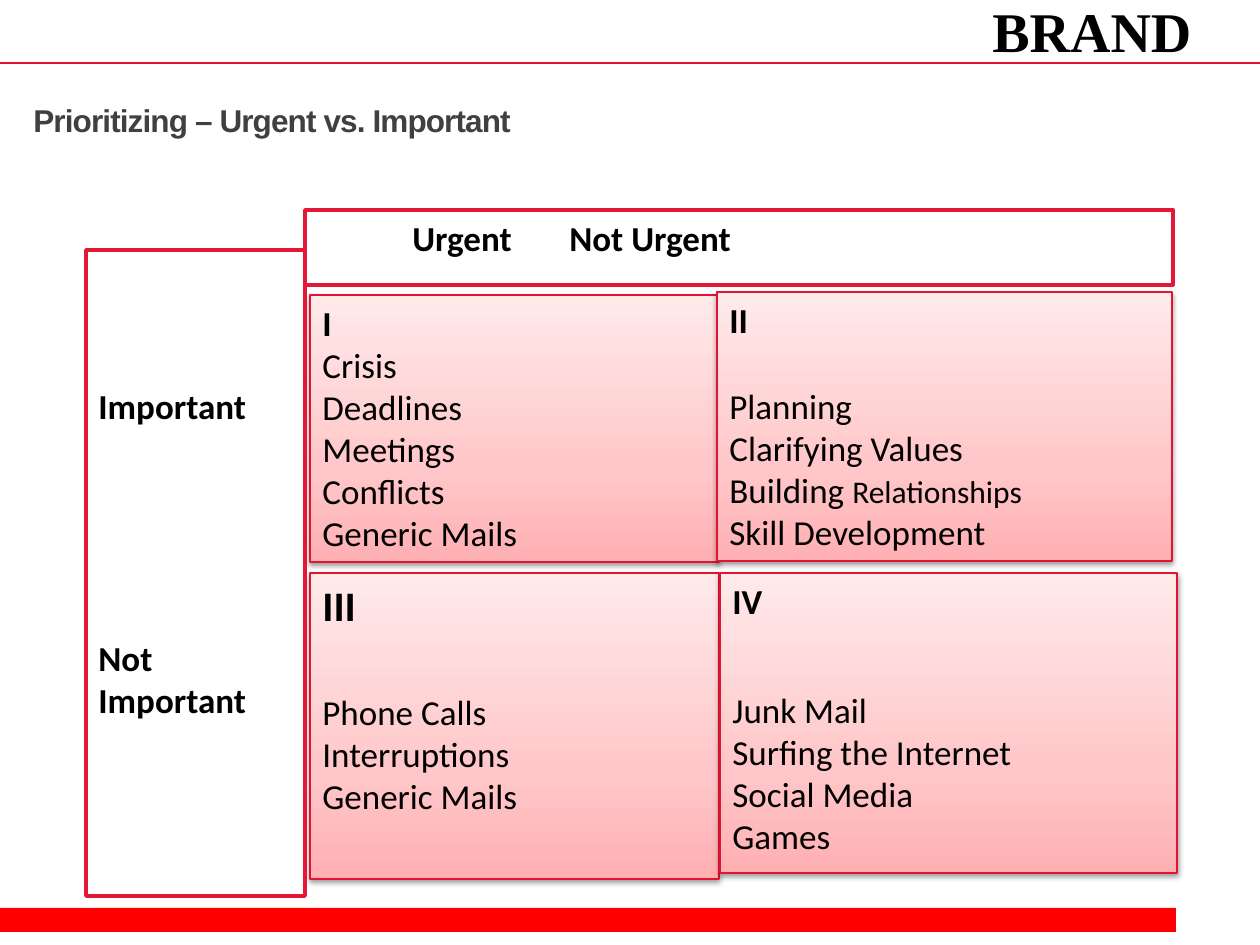
from pptx import Presentation
from pptx.dml.color import RGBColor
from pptx.enum.shapes import MSO_CONNECTOR, MSO_SHAPE
from pptx.enum.text import MSO_ANCHOR, PP_ALIGN
from pptx.oxml.ns import qn
from pptx.util import Pt
from lxml import etree

RECT = MSO_SHAPE.RECTANGLE
STRAIGHT = MSO_CONNECTOR.STRAIGHT
TOP = MSO_ANCHOR.TOP
LEFT, CENTER = PP_ALIGN.LEFT, PP_ALIGN.CENTER
SCALE = 914400 / 126  # EMU per px

FRAME_RED, RULE_RED, BAR_RED = "E31837", "E31332", "FF0000"
WHITE, BLACK, GREY = "FFFFFF", "000000", "404040"
PINK_STOPS = ((0, "FFB0B3"), (35, "FFC7C9"), (100, "FFEAEA"))


def px(length):
    return round(length * SCALE)


def color(value):
    return RGBColor.from_string(value)


def child(parent, tag, **attributes):
    return etree.SubElement(parent, qn(tag), {k: str(v) for k, v in attributes.items()})


def write(frame, lines, font="Calibri", size=20, fill=BLACK, bold=False,
          align=LEFT, spacing=None):
    """Each line is a list of (text, overrides) runs and the gap above it in points."""
    frame.word_wrap = True
    frame.vertical_anchor = TOP
    for index, (runs, gap) in enumerate(lines):
        paragraph = frame.paragraphs[0] if index == 0 else frame.add_paragraph()
        paragraph.alignment = align
        if gap:
            paragraph.space_before = Pt(gap)
        for text, changes in runs:
            run = paragraph.add_run()
            run.text = text
            run.font.name = font
            run.font.size = Pt(changes.get("size", size))
            run.font.bold = changes.get("bold", bold)
            run.font.color.rgb = color(fill)
            if spacing:
                run.font._element.set("spc", str(spacing))


def line_of(text, gap=0, **changes):
    return [(text, changes)], gap


def add_box(slide, box, fill=None, line=None, width=0.75):
    shape = slide.shapes.add_shape(RECT, *map(px, box))
    shape.shadow.inherit = False
    if fill:
        shape.fill.solid()
        shape.fill.fore_color.rgb = color(fill)
    if line:
        shape.line.color.rgb = color(line)
        shape.line.width = Pt(width)
    else:
        shape.line.fill.background()
    return shape


def add_text(slide, box, lines, **style):
    frame = slide.shapes.add_textbox(*map(px, box)).text_frame
    write(frame, lines, **style)


def add_branding(slide, width):
    # Name at top right, rule under it, bar at the foot
    add_text(slide, (966, -10, 252, 73), [line_of("BRAND")],
             font="Times New Roman", size=32, bold=True, align=CENTER)
    add_box(slide, (0, 908, 1176, 24), BAR_RED)
    rule = slide.shapes.add_connector(STRAIGHT, 0, px(63), px(width), px(63))
    rule.line.color.rgb = color(RULE_RED)
    rule.line.width = Pt(0.75)
    child(rule._element.spPr, "a:effectLst")


def add_column_header(slide, box, first, second, first_x, second_x):
    header = add_box(slide, box, WHITE, FRAME_RED, 2)
    write(header.text_frame, [line_of(f"{first}\t{second}")], bold=True)
    properties = header.text_frame.paragraphs[0]._p.get_or_add_pPr()
    properties.set("marL", "0")
    properties.set("indent", str(px(first_x)))
    tabs = child(properties, "a:tabLst")
    child(tabs, "a:tab", pos=px(second_x), algn="l")


def add_row_header(slide, box, lines, top_inset):
    header = add_box(slide, box, WHITE, FRAME_RED, 2)
    header.text_frame.margin_top = px(top_inset)
    write(header.text_frame, lines, bold=True)


def add_quadrant(slide, box, numeral, items, gap=0, numeral_size=20):
    quadrant = add_box(slide, box, line=RULE_RED)
    # Pink gradient, darkest at the bottom
    quadrant.fill.gradient()
    quadrant.fill.gradient_angle = 90
    properties = quadrant._element.spPr
    stops = properties.find(qn("a:gradFill")).find(qn("a:gsLst"))
    for stop in list(stops):
        stops.remove(stop)
    for position, value in PINK_STOPS:
        child(child(stops, "a:gs", pos=position * 1000), "a:srgbClr", val=value)
    # Soft shadow below
    shadow = child(properties.find(qn("a:effectLst")), "a:outerShdw", blurRad=Pt(3.1),
                   dist=Pt(1.6), dir=5400000, rotWithShape=0)
    child(child(shadow, "a:srgbClr", val=BLACK), "a:alpha", val=38000)

    first, *others = items
    lines = [line_of(numeral, bold=True, size=numeral_size), (first, gap)]
    write(quadrant.text_frame, lines + [(item, 0) for item in others])


def plain(*texts):
    return [[(text, {})] for text in texts]


def main():
    deck = Presentation()
    deck.slide_width, deck.slide_height = px(1260), px(945)
    slide = deck.slides.add_slide(deck.slide_layouts[6])

    add_branding(slide, 1260)
    add_text(slide, (21, 95, 609, 50), [line_of("Prioritizing – Urgent vs. Important")],
             font="Arial", size=18, fill=GREY, bold=True, spacing=-50)
    add_column_header(slide, (305, 210, 868, 75), "Urgent", "Not Urgent", 95, 510)

    # Four quadrants, numbered by row
    add_quadrant(slide, (310, 295, 409, 267), "I",
                 plain("Crisis", "Deadlines", "Meetings", "Conflicts", "Generic Mails"))
    building = [("Building ", {}), ("Relationships", {"size": 18})]
    add_quadrant(slide, (717, 292, 455, 269), "II",
                 plain("Planning", "Clarifying Values") + [building]
                 + plain("Skill Development"), gap=25.5)
    add_quadrant(slide, (310, 573, 409, 306), "III",
                 plain("Phone Calls", "Interruptions", "Generic Mails"),
                 gap=35, numeral_size=24)
    add_quadrant(slide, (720, 573, 457, 300), "IV",
                 plain("Junk Mail", "Surfing the Internet", "Social Media", "Games"),
                 gap=38.5)

    add_row_header(slide, (86, 250, 219, 646),
                   [line_of("Important"), line_of("Not", gap=120), line_of("Important")],
                   top_inset=134)
    deck.save("out.pptx")


if __name__ == "__main__":
    main()
